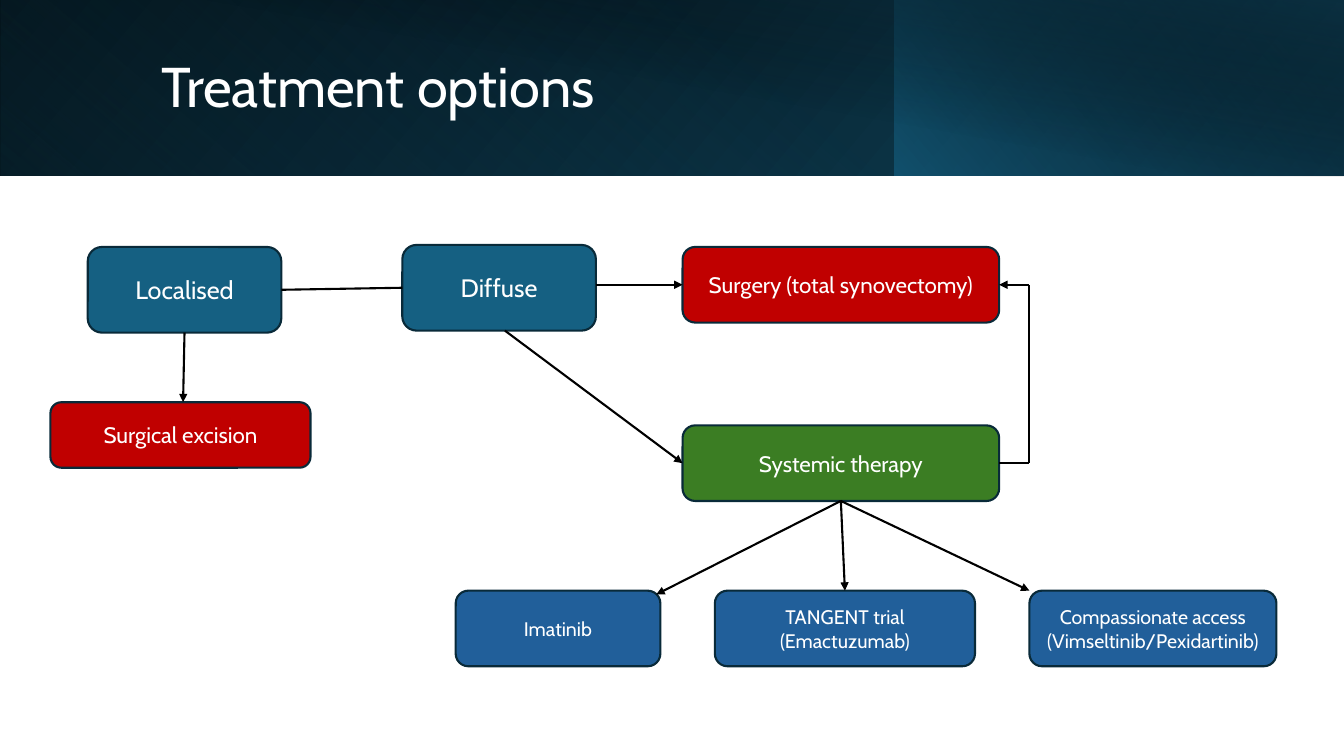
from lxml.etree import SubElement
from pptx import Presentation
from pptx.dml.color import RGBColor
from pptx.enum.shapes import MSO_CONNECTOR, MSO_SHAPE
from pptx.enum.text import MSO_ANCHOR, PP_ALIGN
from pptx.oxml.ns import qn
from pptx.util import Inches, Pt

WIDTH, HEIGHT = 13.33, 7.5
FONT = "Cabin"
WHITE, BLACK, EDGE = "FFFFFF", "000000", "092A39"
TEAL, RED, GREEN, BLUE = "156082", "C00000", "3B7D23", "215F9A"
TITLE = "Treatment options"

# left, width, height, rotation, flipped, angle, stops of (position, colour, opacity)
BANDS = [
    (0, 13.33, 1.74, 0, True, 140, [(0, BLACK, 100), (100, "104862", 100)]),
    (0, 8.88, 1.74, 180, True, 230, [(20, TEAL, 0), (100, "0B3041", 55)]),
    (8.87, 4.46, 1.74, 0, True, 220, [(0, TEAL, 66), (100, BLACK, 30)]),
    (0.5, 12.83, 1.75, 0, False, 280, [(50, BLACK, 0), (99, "0B3041", 52)]),
]

COLS = {"localised": (0.87, 1.92), "excision": (0.5, 2.58), "diffuse": (3.99, 1.92),
        "therapy": (6.77, 3.14), "imatinib": (4.52, 2.03), "trial": (7.09, 2.58),
        "access": (10.21, 2.45)}
ROWS = {"type": (2.45, 0.85), "diffuse": (2.43, 0.85), "surgery": (2.45, 0.75),
        "excision": (3.99, 0.65), "systemic": (4.22, 0.75), "drug": (5.86, 0.75)}

BOXES = {
    "localised": ("localised", "type", TEAL, 18, ["Localised"]),
    "diffuse": ("diffuse", "diffuse", TEAL, 18, ["Diffuse"]),
    "surgery": ("therapy", "surgery", RED, 16, ["Surgery (total synovectomy)"]),
    "excision": ("excision", "excision", RED, 16, ["Surgical excision"]),
    "systemic": ("therapy", "systemic", GREEN, 16, ["Systemic therapy"]),
    "imatinib": ("imatinib", "drug", BLUE, 14, ["Imatinib"]),
    "trial": ("trial", "drug", BLUE, 14, ["TANGENT trial (Emactuzumab)"]),
    "access": ("access", "drug", BLUE, 14,
               ["Compassionate access", "(Vimseltinib/Pexidartinib)"]),
}


def rgb(value):
    return RGBColor.from_string(value)


def put_text(shape, lines, size, align=PP_ALIGN.CENTER, spacing=None):
    tf = shape.text_frame
    tf.word_wrap = True
    tf.vertical_anchor = MSO_ANCHOR.MIDDLE
    for i, line in enumerate(lines):
        p = tf.paragraphs[0] if i == 0 else tf.add_paragraph()
        p.alignment, p.line_spacing = align, spacing
        r = p.add_run()
        r.text = line
        r.font.name, r.font.size = FONT, Pt(size)
        r.font.color.rgb = rgb(WHITE)


def add_shape(s, kind, left, top, width, height):
    sp = s.shapes.add_shape(kind, *map(Inches, (left, top, width, height)))
    sp.shadow.inherit = False
    return sp


def add_band(s, left, width, height, turn, flipped, angle, stops):
    sp = add_shape(s, MSO_SHAPE.RECTANGLE, left, 0, width, height)
    sp.rotation = turn
    sp.line.fill.background()
    sp.fill.gradient()
    props = sp._element.spPr
    if flipped:
        props.find(qn("a:xfrm")).set("flipH", "1")
    grad = props.find(qn("a:gradFill"))
    for child in list(grad):
        grad.remove(child)
    grad.set("rotWithShape", "1")
    gs_list = SubElement(grad, qn("a:gsLst"))
    for pos, color, opacity in stops:
        gs = SubElement(gs_list, qn("a:gs"), pos=str(pos * 1000))
        clr = SubElement(gs, qn("a:srgbClr"), val=color)
        SubElement(clr, qn("a:alpha"), val=str(opacity * 1000))
    SubElement(grad, qn("a:lin"), ang=str(angle * 60000), scaled="0")


def add_box(s, col, row, color, size, lines):
    (left, width), (top, height) = COLS[col], ROWS[row]
    sp = add_shape(s, MSO_SHAPE.ROUNDED_RECTANGLE, left, top, width, height)
    sp.fill.solid()
    sp.fill.fore_color.rgb = rgb(color)
    sp.line.color.rgb = rgb(EDGE)
    sp.line.width = Pt(1.5)
    put_text(sp, lines, size)


def side(name, across, down):
    (left, width), (top, height) = COLS[BOXES[name][0]], ROWS[BOXES[name][1]]
    return left + across * width, top + down * height


def add_line(s, start, end, arrow=True):
    cn = s.shapes.add_connector(MSO_CONNECTOR.STRAIGHT, *map(Inches, (*start, *end)))
    cn.line.color.rgb = rgb(BLACK)
    cn.line.width = Pt(1.5)
    if arrow:
        SubElement(cn.line._get_or_add_ln(), qn("a:tailEnd"), type="triangle")
    SubElement(cn._element.spPr, qn("a:effectLst"))


def main():
    """Build the treatment options slide."""
    prs = Presentation()
    prs.slide_width, prs.slide_height = Inches(WIDTH), Inches(HEIGHT)
    s = prs.slides.add_slide(prs.slide_layouts[6])
    for band in BANDS:
        add_band(s, *band)
    title = s.shapes.add_textbox(*map(Inches, (1.5, 0.32, 10.82, 1.13)))
    put_text(title, [TITLE], 40, align=PP_ALIGN.LEFT, spacing=0.9)
    for box in BOXES.values():
        add_box(s, *box)

    surgery_in, surgery_back = side("surgery", 0, 0.5), side("surgery", 1, 0.5)
    systemic_out, fan = side("systemic", 1, 0.5), side("systemic", 0.5, 1)
    bend = COLS["access"][0]
    corners = (bend, systemic_out[1]), (bend, surgery_back[1])
    add_line(s, side("localised", 0.5, 1), side("excision", 0.51, 0))
    add_line(s, (side("diffuse", 1, 0)[0], surgery_in[1]), surgery_in)
    add_line(s, side("diffuse", 0.53, 1), side("systemic", 0, 0.5))
    for target in (side("trial", 0.5, 0), side("imatinib", 0.98, 0.05), side("access", 0, 0)):
        add_line(s, fan, target)
    add_line(s, side("localised", 1, 0.5), side("diffuse", 0, 0.5), arrow=False)
    add_line(s, systemic_out, corners[0], arrow=False)
    add_line(s, *corners, arrow=False)
    add_line(s, corners[1], surgery_back)
    prs.save("out.pptx")


if __name__ == "__main__":
    main()
